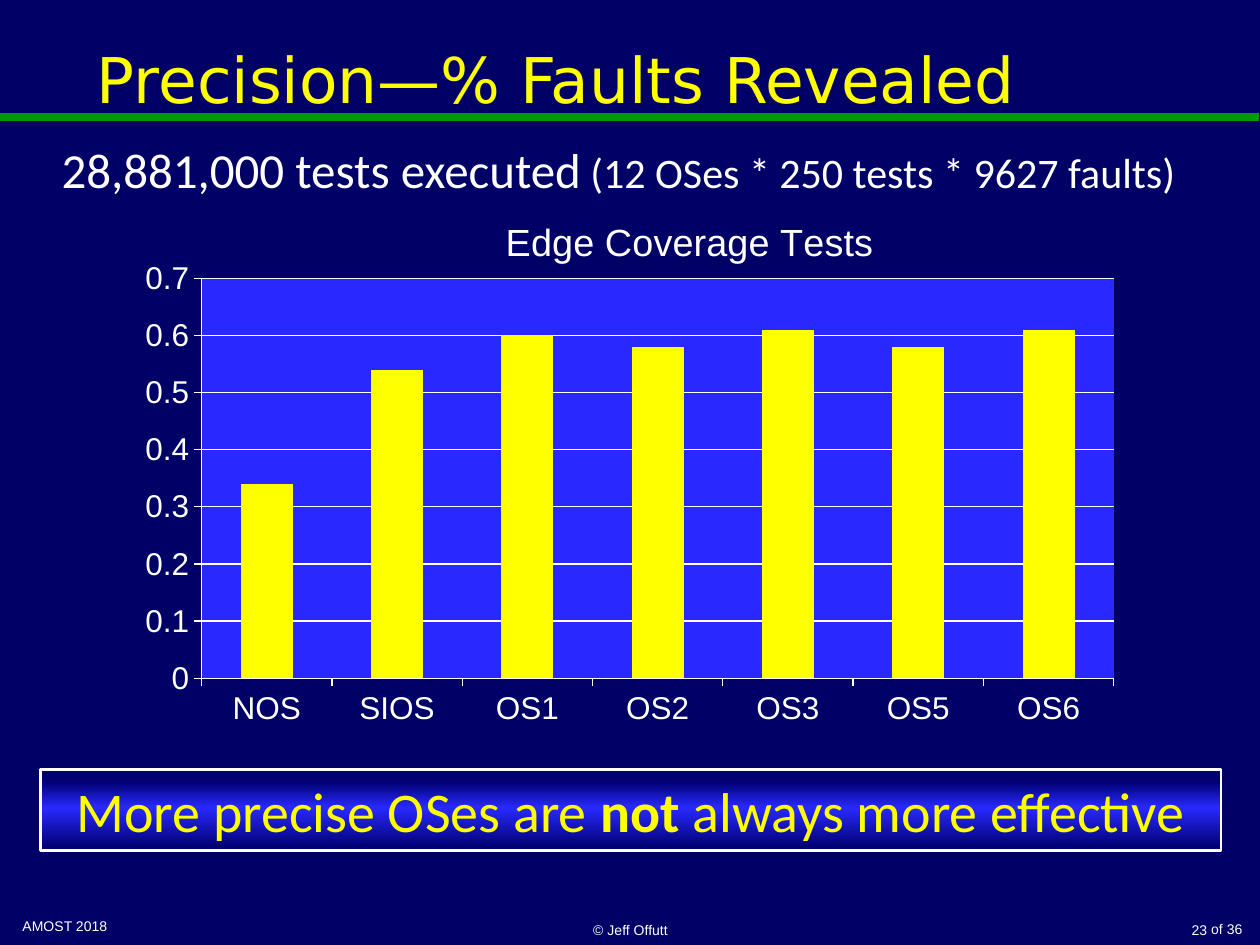
from copy import deepcopy

from lxml import etree
from pptx import Presentation, util as u
from pptx.chart.data import CategoryChartData
from pptx.dml.color import RGBColor
from pptx.enum import chart as ch, shapes, text
from pptx.oxml import parse_xml
from pptx.oxml.ns import nsdecls, qn

Pt = u.Pt
NAVY, WHITE, YELLOW, GREEN, BLUE = "000066", "FFFFFF", "FFFF00", "009900", "2929FF"
LEFT, CENTER, RIGHT = text.PP_ALIGN.LEFT, text.PP_ALIGN.CENTER, text.PP_ALIGN.RIGHT
TOP, MIDDLE, BOTTOM = (text.MSO_ANCHOR.TOP, text.MSO_ANCHOR.MIDDLE,
                       text.MSO_ANCHOR.BOTTOM)

# box, runs (text, size, bold), font, colour, alignment, anchor, wrap
TEXTS = [
    ((5.76, 0, 624.24, 90), [("Precision—% Faults Revealed", 36, False)],
     "DejaVu Sans", YELLOW, CENTER, MIDDLE, True),
    ((28.08, 76.32, 662.4, 41.04),
     [("28,881,000 tests executed", 28, False),
      (" (12 OSes * 250 tests * 9627 faults)", 24, False)],
     "Calibri", WHITE, LEFT, TOP, False),
    ((5.76, 520.56, 167.76, 18.72), [("AMOST 2018", 8, False)],
     "Arial", WHITE, LEFT, TOP, True),
    ((246.24, 516.24, 228.24, 23.76), [("© Jeff Offutt", 8, False)],
     "Arial", WHITE, CENTER, BOTTOM, True),
    ((566.64, 516.24, 130.32, 23.76), [("23", 8, False)],
     "Arial", WHITE, RIGHT, BOTTOM, True),
    ((684, 522.72, 33.12, 17.28), [("of 36", 8, False)],
     "Arial", WHITE, RIGHT, TOP, False),
]

BANNER_BOX = (23.04, 439.92, 674.64, 46.08)
BANNER = [("More precise OSes are ", 32, False), ("not", 32, True),
          (" always more effective", 32, False)]
BANNER_STOPS = [(0.15, "000073"), (0.47, BLUE), (0.96, "000073")]

CHART_BOX = (72, 101.52, 576, 319.68)
CHART_TITLE = "Edge Coverage Tests"
REVEALED = {"NOS": 0.34, "SIOS": 0.54, "OS1": 0.6, "OS2": 0.58,
            "OS3": 0.61, "OS5": 0.58, "OS6": 0.61}
TITLE_LAYOUT = {"x": 0.37, "y": 0.06}
PLOT_LAYOUT = {"x": 0.075, "y": 0.18, "w": 0.905, "h": 0.715}


def rgb(color):
    return RGBColor.from_string(color)


def points(box):
    return [Pt(v) for v in box]


def write(sp, runs, font, color, align, anchor, wrap):
    tf = sp.text_frame
    tf.word_wrap = wrap
    tf.vertical_anchor = anchor
    p = tf.paragraphs[0]
    p.alignment = align
    for words, size, bold in runs:
        r = p.add_run()
        r.text = words
        r.font.name, r.font.size, r.font.bold = font, Pt(size), bold
        r.font.color.rgb = rgb(color)


def add_rule(s):
    line = s.shapes.add_connector(shapes.MSO_CONNECTOR.STRAIGHT,
                                  Pt(0), Pt(67), Pt(719.3), Pt(67))
    line.line.color.rgb = rgb(GREEN)
    line.line.width = Pt(4.5)
    etree.SubElement(line._element.spPr, qn("a:effectLst"))


def add_banner(s):
    sp = s.shapes.add_shape(shapes.MSO_SHAPE.RECTANGLE, *points(BANNER_BOX))
    sp.shadow.inherit = False
    sp.fill.gradient()
    sp.fill.gradient_angle = 270
    stops = sp._element.spPr.find(qn("a:gradFill")).find(qn("a:gsLst"))
    stops.append(deepcopy(stops[0]))
    for stop, (position, color) in zip(sp.fill.gradient_stops, BANNER_STOPS):
        stop.position = position
        stop.color.rgb = rgb(color)
    sp.line.color.rgb = rgb(WHITE)
    sp.line.width = Pt(1.5)
    write(sp, BANNER, "Calibri", YELLOW, CENTER, MIDDLE, True)


def manual_layout(parts, inner=False):
    target = '<c:layoutTarget val="inner"/>' if inner else ""
    modes = '<c:xMode val="edge"/><c:yMode val="edge"/>'
    values = "".join(f'<c:{k} val="{v}"/>' for k, v in parts.items())
    return parse_xml(f'<c:layout {nsdecls("c")}><c:manualLayout>{target}{modes}'
                     f'{values}</c:manualLayout></c:layout>')


def replace_layout(parent, layout, index):
    for old in parent.findall(qn("c:layout")):
        parent.remove(old)
    parent.insert(index, layout)


def add_revealed_chart(s):
    data = CategoryChartData()
    data.categories = list(REVEALED)
    data.add_series("Series 1", list(REVEALED.values()))
    chart = s.shapes.add_chart(ch.XL_CHART_TYPE.COLUMN_CLUSTERED,
                               *points(CHART_BOX), data).chart
    chart.has_legend = False
    chart.font.name, chart.font.size = "Arial", Pt(18)
    chart.font.color.rgb = rgb(WHITE)

    chart.has_title = True
    r = chart.chart_title.text_frame.paragraphs[0].add_run()
    r.text = CHART_TITLE
    r.font.name, r.font.size, r.font.bold = "Arial", Pt(21.6), False
    r.font.color.rgb = rgb(WHITE)
    replace_layout(chart.chart_title._element, manual_layout(TITLE_LAYOUT), 1)

    plot = chart.plots[0]
    plot.gap_width = 150
    plot.vary_by_categories = False
    fill = plot.series[0].format.fill
    fill.solid()
    fill.fore_color.rgb = rgb(YELLOW)

    values = chart.value_axis
    values.minimum_scale, values.maximum_scale, values.major_unit = 0, 0.7, 0.1
    values.has_major_gridlines = True
    values.tick_labels.number_format = "General"
    values.tick_labels.number_format_is_linked = False
    for axis in (chart.category_axis, values):
        axis.major_tick_mark = ch.XL_TICK_MARK.OUTSIDE
    for part in (chart.category_axis, values, values.major_gridlines):
        part.format.line.color.rgb = rgb(WHITE)
        part.format.line.width = Pt(0.75)

    area = chart._chartSpace.chart.plotArea
    replace_layout(area, manual_layout(PLOT_LAYOUT, inner=True), 0)
    area.append(parse_xml(
        f'<c:spPr {nsdecls("c", "a")}><a:solidFill><a:srgbClr val="{BLUE}"/>'
        '</a:solidFill><a:ln><a:noFill/></a:ln></c:spPr>'))


def main():
    prs = Presentation()
    prs.slide_width, prs.slide_height = Pt(720), Pt(540)
    s = prs.slides.add_slide(prs.slide_layouts[6])
    s.background.fill.solid()
    s.background.fill.fore_color.rgb = rgb(NAVY)
    add_rule(s)
    add_revealed_chart(s)
    for box, *style in TEXTS:
        write(s.shapes.add_textbox(*points(box)), *style)
    add_banner(s)
    prs.save("out.pptx")


if __name__ == "__main__":
    main()
